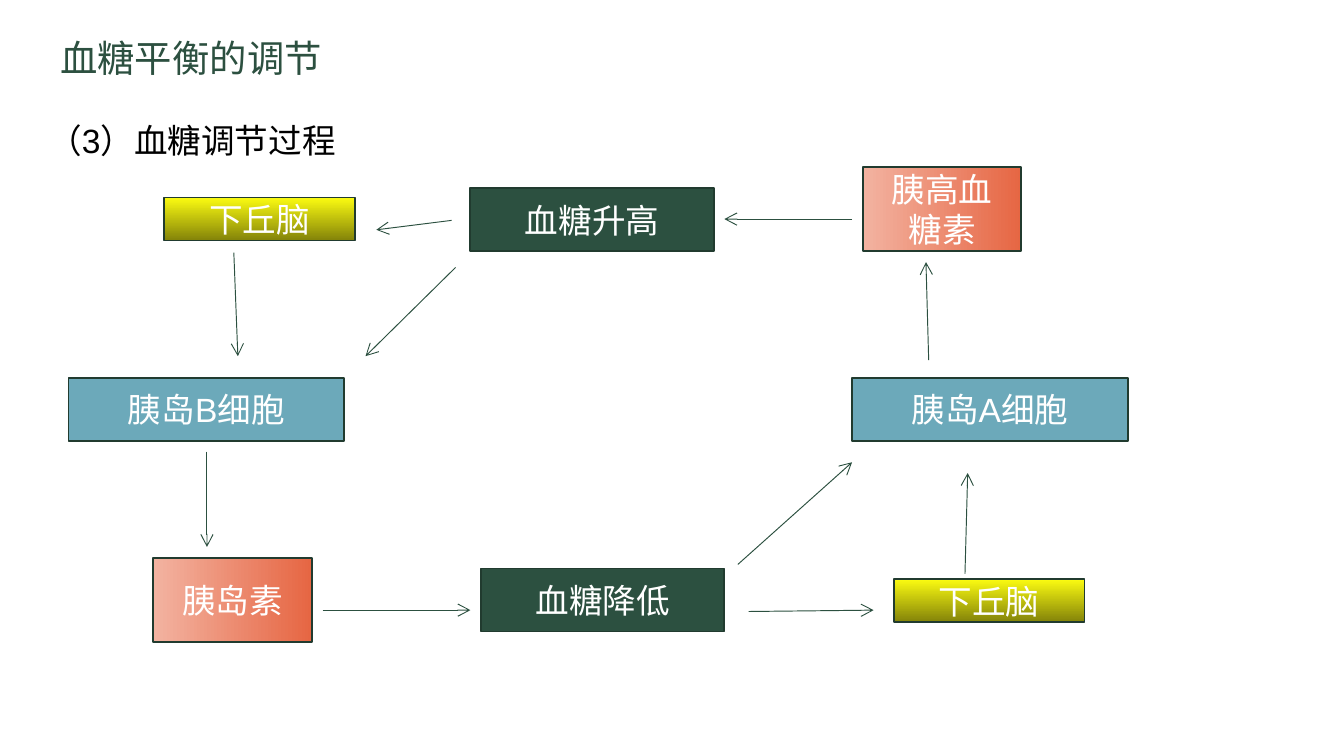
from lxml import etree
from pptx import Presentation
from pptx.dml.color import RGBColor
from pptx.enum.shapes import MSO_CONNECTOR as Connector, MSO_SHAPE as Shape
from pptx.enum.text import MSO_ANCHOR as Anchor, MSO_AUTO_SIZE as AutoSize, PP_ALIGN as Align
from pptx.oxml.ns import qn
from pptx.util import Inches, Pt

COLUMNS, ROWS = 100, 56.25
CELL = Inches(0.1)
CJK_FONT = "Noto Sans CJK SC"
GREEN, OUTLINE, WHITE = "2C5040", "213B2F", "FFFFFF"

BOX_KINDS = {
    "level": (18.1, 4.7, [GREEN], None),
    "cell": (20.5, 4.7, ["6CA9BA"], None),
    "brain": (14.2, 3.2, ["FBFB11", "838309"], 270),
    "hormone": (11.8, 6.3, ["F3B3A1", "E66643"], 0),
}

BOXES = [
    ("level", "血糖升高", 35, 14),
    ("level", "血糖降低", 35.8, 42.3),
    ("cell", "胰岛A细胞", 63.4, 28.1),
    ("cell", "胰岛B细胞", 5.1, 28.1),
    ("brain", "下丘脑", 12.2, 14.7),
    ("brain", "下丘脑", 66.5, 43.1),
    ("hormone", "胰岛素", 11.4, 41.5),
    ("hormone", "胰高血糖素", 64.2, 12.4),
]

ARROWS = [
    (33.9, 19.9, 27.2, 26.5),
    (15.4, 33.6, 15.4, 40.7),
    (24, 45.4, 35, 45.4),
    (54.9, 42, 63.4, 34.4),
    (69.1, 26.8, 68.9, 19.5),
    (63.4, 16.3, 53.9, 16.3),
    (33.6, 16.4, 28, 17.1),
    (17.4, 18.8, 17.7, 26.5),
    (55.7, 45.5, 65, 45.4),
    (71.8, 42.7, 72, 35.2),
]


def color(value):
    return RGBColor.from_string(value)


def grid(*cells):
    return [round(cell * CELL) for cell in cells]


def write(paragraph, text, size, ink, font="Arial"):
    run = paragraph.add_run()
    run.text = text
    run.font.size = Pt(size)
    run.font.name = font
    run.font.color.rgb = color(ink)
    latin = run._r.get_or_add_rPr().find(qn("a:latin"))
    latin.addnext(etree.Element(qn("a:ea"), typeface=CJK_FONT))


def add_heading(slide, text, place, size, ink, font="Arial"):
    frame = slide.shapes.add_textbox(*grid(*place)).text_frame
    frame.word_wrap = True
    frame.auto_size = AutoSize.SHAPE_TO_FIT_TEXT
    write(frame.paragraphs[0], text, size, ink, font)


def paint(fill, colors, angle):
    if angle is None:
        fill.solid()
        fill.fore_color.rgb = color(colors[0])
        return
    fill.gradient()
    fill.gradient_angle = angle
    for position, (stop, value) in enumerate(zip(fill.gradient_stops, colors)):
        stop.position = position
        stop.color.rgb = color(value)


def add_box(slide, kind, text, left, top):
    width, height, colors, angle = BOX_KINDS[kind]
    shape = slide.shapes.add_shape(Shape.RECTANGLE, *grid(left, top, width, height))
    shape.shadow.inherit = False
    paint(shape.fill, colors, angle)
    shape.line.color.rgb = color(OUTLINE)
    shape.line.width = Pt(1)
    frame = shape.text_frame
    frame.word_wrap = True
    frame.vertical_anchor = Anchor.MIDDLE
    paragraph = frame.paragraphs[0]
    paragraph.alignment = Align.CENTER
    write(paragraph, text, 18, WHITE)


def add_arrow(slide, *ends):
    connector = slide.shapes.add_connector(Connector.STRAIGHT, *grid(*ends))
    connector.line.color.rgb = color(GREEN)
    connector.line.width = Pt(0.5)
    etree.SubElement(connector.line._get_or_add_ln(), qn("a:tailEnd"), type="arrow")
    etree.SubElement(connector._element.spPr, qn("a:effectLst"))


def main():
    presentation = Presentation()
    presentation.slide_width, presentation.slide_height = grid(COLUMNS, ROWS)
    slide = presentation.slides.add_slide(presentation.slide_layouts[6])
    add_heading(slide, "血糖平衡的调节", (3.5, 2.1, 42.6, 4.4), 20, GREEN, CJK_FONT)
    add_heading(slide, "（3）血糖调节过程", (2.6, 8.4, 23.8, 4), 18, "000000")
    for box in BOXES:
        add_box(slide, *box)
    for arrow in ARROWS:
        add_arrow(slide, *arrow)
    presentation.save("out.pptx")


if __name__ == "__main__":
    main()
